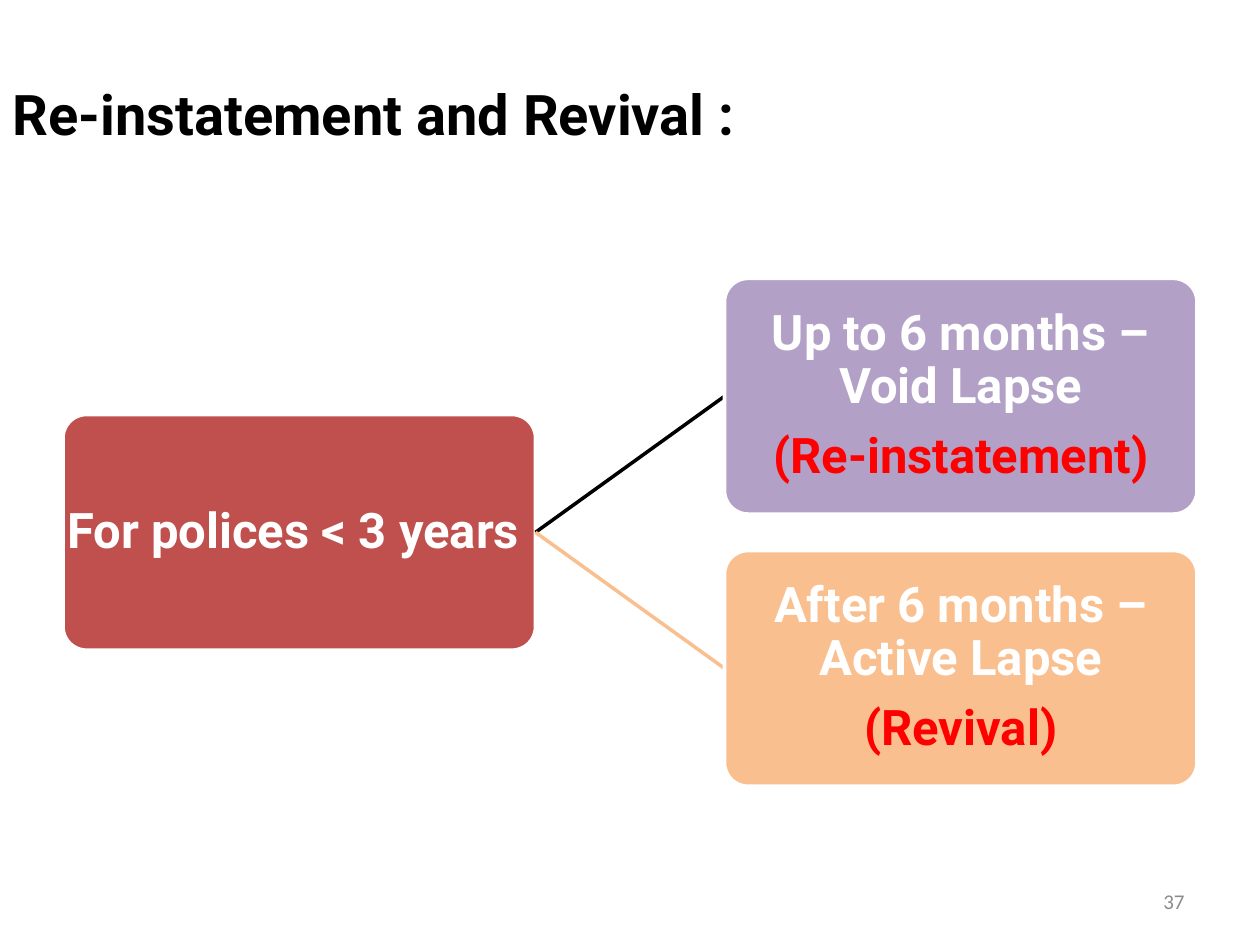
from dataclasses import dataclass

from lxml.etree import SubElement
from pptx import Presentation
from pptx.dml.color import RGBColor as RGB
from pptx.enum.shapes import MSO_CONNECTOR as Connector, MSO_SHAPE as Shape
from pptx.enum.text import MSO_ANCHOR as Anchor, MSO_AUTO_SIZE as AutoSize, PP_ALIGN as Align
from pptx.oxml.ns import qn
from pptx.util import Inches, Pt


@dataclass(frozen=True)
class Theme:
    heading_font: str = "Roboto"
    number_font: str = "Calibri"
    title_size: float = 32
    node_size: float = 28
    number_size: float = 12
    line_width: float = 2
    black: RGB = RGB(0x00, 0x00, 0x00)
    white: RGB = RGB(0xFF, 0xFF, 0xFF)
    grey: RGB = RGB(0x8C, 0x8C, 0x8C)
    accent: RGB = RGB(0xFF, 0x00, 0x00)
    policy: RGB = RGB(0xBF, 0x50, 0x4D)
    void: RGB = RGB(0xB2, 0xA0, 0xC7)
    active: RGB = RGB(0xFA, 0xBF, 0x8E)


THEME = Theme()


def add_run(paragraph, wording, font, size, color, bold=False):
    run = paragraph.add_run()
    run.text = wording
    run.font.name = font
    run.font.size = Pt(size)
    run.font.bold = bold
    run.font.color.rgb = color


def place_title(slide, wording, left, top, width, height):
    title = slide.shapes.title
    title.left, title.top, title.width, title.height = left, top, width, height
    frame = title.text_frame
    frame.word_wrap = True
    frame.auto_size = AutoSize.NONE
    frame.vertical_anchor = Anchor.TOP
    heading = frame.paragraphs[0]
    heading.alignment = Align.LEFT
    add_run(heading, wording, THEME.heading_font, THEME.title_size, THEME.black, True)


def add_node(slide, lines, fill, left, top, width, height, wrap=True):
    node = slide.shapes.add_shape(Shape.ROUNDED_RECTANGLE, left, top, width, height)
    node.adjustments[0] = 0.1
    node.shadow.inherit = False
    node.fill.solid()
    node.fill.fore_color.rgb = fill
    node.line.color.rgb = THEME.white
    node.line.width = Pt(THEME.line_width)
    frame = node.text_frame
    frame.word_wrap = wrap
    frame.vertical_anchor = Anchor.MIDDLE
    frame.margin_left = frame.margin_right = Inches(0.02)
    frame.margin_top = frame.margin_bottom = Inches(0.02)
    for index, (wording, color) in enumerate(lines):
        line = frame.add_paragraph() if index else frame.paragraphs[0]
        line.alignment = Align.CENTER
        line.line_spacing = 0.9
        if index:
            line.space_before = Pt(9.8)
        add_run(line, wording, THEME.heading_font, THEME.node_size, color, True)
    return node


def add_branch(slide, root, color, end_x, end_y):
    start_x, start_y = root.left + root.width, root.top + root.height // 2
    branch = slide.shapes.add_connector(Connector.STRAIGHT, start_x, start_y, end_x, end_y)
    branch.line.color.rgb = color
    branch.line.width = Pt(THEME.line_width)
    SubElement(branch._element.spPr, qn("a:effectLst"))
    branch.begin_connect(root, 3)
    return branch


def place_lapse_tree(slide, policy, outcomes, left, top, width, height):
    node_width, node_height = Inches(3.75), Inches(1.87)
    outcome_left = left + width - node_width
    step = (height - node_height) // (len(outcomes) - 1)
    root = add_node(slide, [(policy, THEME.white)], THEME.policy, left,
                    top + (height - node_height) // 2, node_width, node_height, wrap=False)
    for index, (period, remedy, fill, branch_color) in enumerate(outcomes):
        outcome_top = top + index * step
        branch = add_branch(slide, root, branch_color, outcome_left,
                            outcome_top + node_height // 2)
        outcome = add_node(slide, [(period, THEME.white), (remedy, THEME.accent)], fill,
                           outcome_left, outcome_top, node_width, node_height)
        branch.end_connect(outcome, 1)


def place_page_number(slide, number, left, top, width, height):
    frame = slide.shapes.add_textbox(left, top, width, height).text_frame
    frame.word_wrap = True
    frame.vertical_anchor = Anchor.MIDDLE
    page = frame.paragraphs[0]
    page.alignment = Align.RIGHT
    add_run(page, number, THEME.number_font, THEME.number_size, THEME.grey)


def main():
    deck = Presentation()
    deck.slide_width, deck.slide_height = Inches(10), Inches(7.5)
    slide = deck.slides.add_slide(deck.slide_layouts[5])
    place_title(slide, "Re-instatement and Revival :",
                Inches(0), Inches(0.58), Inches(6.53), Inches(0.64))
    outcomes = [
        ("Up to 6 months –Void Lapse", "(Re-instatement)", THEME.void, THEME.black),
        ("After 6 months –Active Lapse", "(Revival)", THEME.active, THEME.active),
    ]
    place_lapse_tree(slide, "For polices < 3 years ", outcomes,
                     Inches(0.5), Inches(2.21), Inches(9), Inches(4.03))
    place_page_number(slide, "37", Inches(7.17), Inches(6.95), Inches(2.33), Inches(0.4))
    deck.save("out.pptx")


if __name__ == "__main__":
    main()
